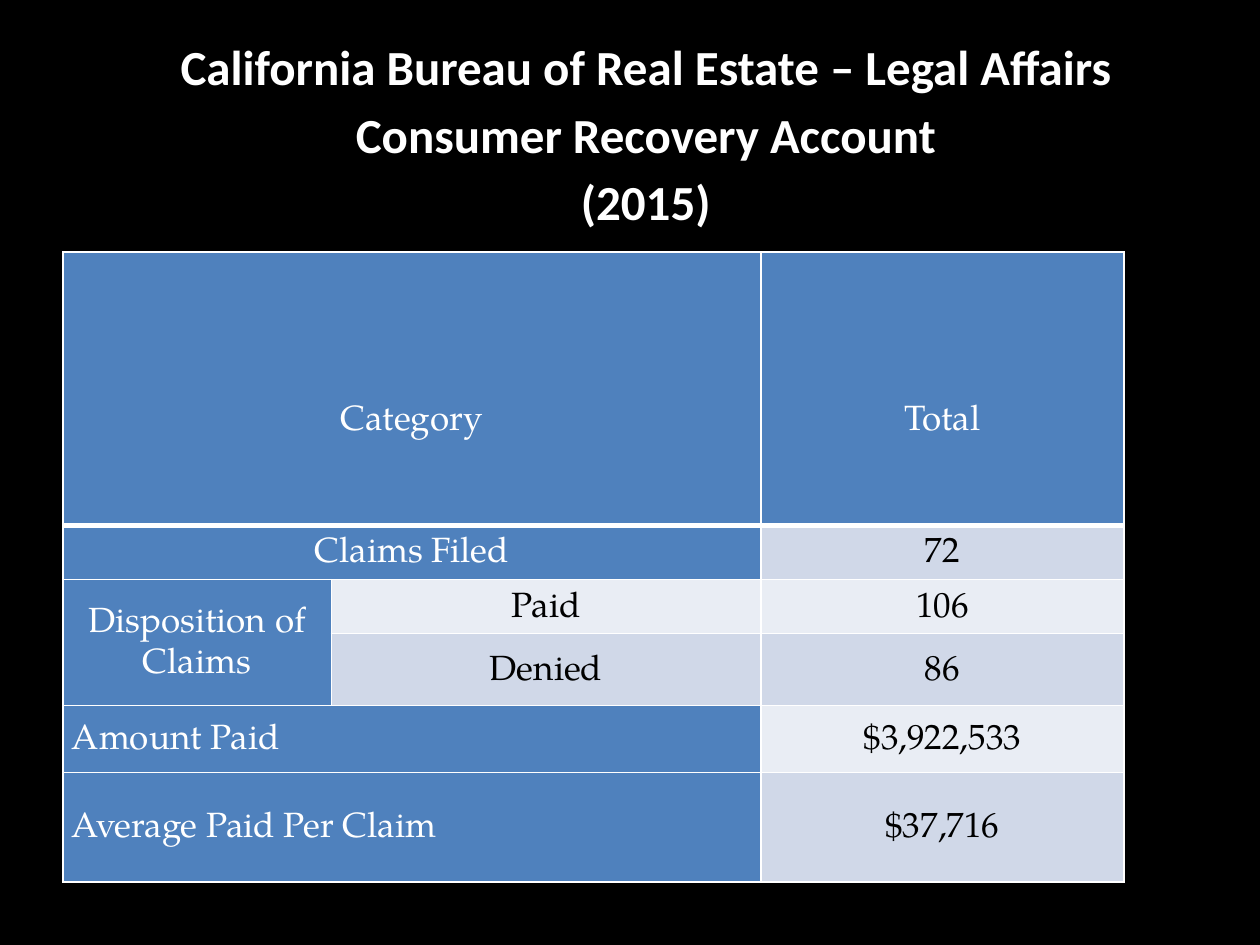
from lxml import etree
from pptx import Presentation
from pptx import util as u
from pptx.dml import color
from pptx.enum import text
from pptx.oxml import ns

WHITE, BLACK, BLUE = "FFFFFF", "000000", "4F81BD"
BANDS = ("E9EDF4", "D0D8E8")
COLUMNS = (2.13, 3.41, 2.88)
ROWS = (2.17, 0.43, 0.43, 0.57, 0.53, 0.87)
LABELS = (
    (0, 0, 1, 2, "Category"),
    (1, 0, 1, 2, "Claims Filed"),
    (2, 0, 2, 1, "Disposition of Claims"),
    (4, 0, 1, 2, "Amount Paid"),
    (5, 0, 1, 2, "Average Paid Per Claim"),
    (0, 2, 1, 1, "Total"),
)
VALUES = (
    (1, 2, "72"),
    (2, 1, "Paid"),
    (2, 2, "106"),
    (3, 1, "Denied"),
    (3, 2, "86"),
    (4, 2, "$3,922,533"),
    (5, 2, "$37,716"),
)


def paint(fill, value):
    """Give a fill one solid colour from a hex string."""
    fill.solid()
    fill.fore_color.rgb = color.RGBColor.from_string(value)


def format_paragraph(paragraph, font, size, value, alignment=text.PP_ALIGN.CENTER):
    """Set the font, colour, alignment and line spacing of a paragraph."""
    paragraph.font.name = font
    paragraph.font.size = u.Pt(size)
    paragraph.font.color.rgb = color.RGBColor.from_string(value)
    paragraph.alignment = alignment
    paragraph.line_spacing = 1.15


def add_title(slide, lines):
    """Place the heading in the title placeholder."""
    title = slide.shapes.title
    title.left, title.top = u.Inches(0.5), u.Inches(0.17)
    title.width, title.height = u.Inches(9.25), u.Inches(1.7)
    frame = title.text_frame
    frame.text = "\v".join(lines)
    frame.word_wrap = True
    frame.auto_size = text.MSO_AUTO_SIZE.SHAPE_TO_FIT_TEXT
    frame.vertical_anchor = text.MSO_ANCHOR.TOP
    paragraph = frame.paragraphs[0]
    format_paragraph(paragraph, "Calibri", 28, WHITE)
    paragraph.font.bold = True
    paragraph.space_before, paragraph.space_after = u.Pt(0), u.Pt(10)


def add_borders(cell, bottom=1):
    """Draw white lines on the four sides of a cell."""
    properties = cell._tc.get_or_add_tcPr()
    for side, width in (("L", 1), ("R", 1), ("T", 1), ("B", bottom)):
        line = etree.SubElement(properties, ns.qn(f"a:ln{side}"), w=str(u.Pt(width)))
        fill = etree.SubElement(line, ns.qn("a:solidFill"))
        etree.SubElement(fill, ns.qn("a:srgbClr"), val=WHITE)


def fill_cell(cell, wording, background, foreground, alignment=text.PP_ALIGN.CENTER):
    """Write the wording of a cell and colour it."""
    cell.text = wording
    cell.vertical_anchor = text.MSO_ANCHOR.MIDDLE
    cell.margin_left = cell.margin_right = u.Inches(0.07)
    cell.margin_top = cell.margin_bottom = 0
    paint(cell.fill, background)
    paragraph = cell.text_frame.paragraphs[0]
    format_paragraph(paragraph, "TeX Gyre Pagella", 20, foreground, alignment)
    paragraph.space_before = paragraph.space_after = u.Pt(6)


def add_claims_table(slide):
    """Build the table of claims with merged label cells."""
    frame = slide.shapes.add_table(
        len(ROWS), len(COLUMNS), u.Inches(0.5), u.Inches(2),
        u.Inches(sum(COLUMNS)), u.Inches(sum(ROWS)))
    table = frame.table
    for column, width in zip(table.columns, COLUMNS):
        column.width = u.Inches(width)
    for index, (row, height) in enumerate(zip(table.rows, ROWS)):
        row.height = u.Inches(height)
        for cell in row.cells:
            add_borders(cell, bottom=1 if index else 3)
    for row, column, row_span, column_span, wording in LABELS:
        cell = table.cell(row, column)
        if row_span * column_span > 1:
            cell.merge(table.cell(row + row_span - 1, column + column_span - 1))
        alignment = text.PP_ALIGN.LEFT if row > 3 else text.PP_ALIGN.CENTER
        fill_cell(cell, wording, BLUE, WHITE, alignment)
        if row == 0:
            cell.margin_top = u.Inches(0.5)
    for row, column, wording in VALUES:
        fill_cell(table.cell(row, column), wording, BANDS[row % 2], BLACK)


def main():
    """Build and save the slide."""
    presentation = Presentation()
    presentation.slide_width, presentation.slide_height = u.Inches(10), u.Inches(7.5)
    slide = presentation.slides.add_slide(presentation.slide_layouts[5])
    paint(slide.background.fill, BLACK)
    add_title(slide, (
        "California Bureau of Real Estate – Legal Affairs",
        "Consumer Recovery Account",
        "(2015)"))
    add_claims_table(slide)
    presentation.save("out.pptx")


if __name__ == "__main__":
    main()
